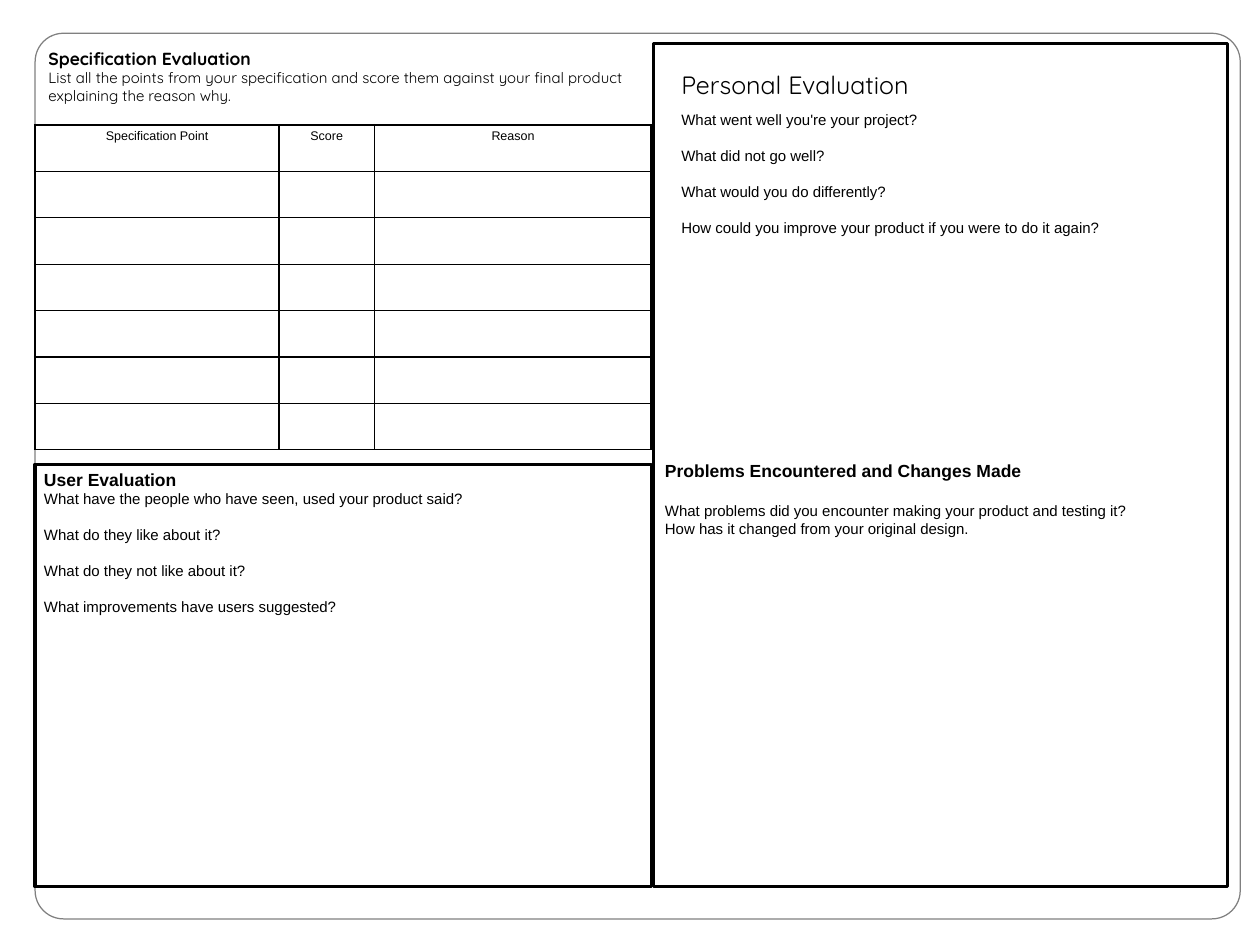
import dataclasses

import pptx
import pptx.dml.color
import pptx.enum.shapes
import pptx.enum.text
import pptx.oxml
import pptx.oxml.ns
import pptx.util

Inches = pptx.util.Inches
Pt = pptx.util.Pt
Kind = pptx.enum.shapes.MSO_SHAPE
Align = pptx.enum.text.PP_ALIGN

BLACK = pptx.dml.color.RGBColor(0x00, 0x00, 0x00)
GREY = pptx.dml.color.RGBColor(0x80, 0x80, 0x80)
LINE = 14.4  # height of one 12 pt line, used as the gap between questions
THIN, THICK = 1, 2.25


@dataclasses.dataclass
class Box:
    left: float
    top: float
    width: float
    height: float


@dataclasses.dataclass
class Frame:
    box: Box
    weight: float
    color: pptx.dml.color.RGBColor = BLACK
    kind: Kind = Kind.RECTANGLE


@dataclasses.dataclass
class Para:
    text: str
    size: float = 12
    bold: bool = False
    gap: float = 0
    font: str = "Arial"


@dataclasses.dataclass
class Note:
    box: Box
    paras: list[Para]


FRAMES = [
    Frame(Box(0.39, 0.37, 13.39, 9.84), 1, GREY, Kind.ROUNDED_RECTANGLE),
    Frame(Box(0.39, 5.16, 6.85, 4.69), 3),
    Frame(Box(7.26, 0.48, 6.38, 9.37), THICK),
]
TITLE = Note(Box(7.47, 0.72, 6.14, 0.44),
             [Para("Personal Evaluation", 20, font="Quicksand")])
BODY = Note(Box(7.47, 1.18, 6.14, 1.51), [
    Para("What went well you're your project?"),
    Para("What did not go well?", gap=LINE),
    Para("What would you do differently?", gap=LINE),
    Para("How could you improve your product if you were to do it again?",
         gap=LINE),
])
NOTES = [
    Note(Box(0.44, 0.48, 6.93, 0.74), [
        Para("Specification Evaluation", 14, True, font="Quicksand"),
        Para("List all the points from your specification and score them "
             "against your final product explaining the reason why.",
             font="Quicksand"),
    ]),
    Note(Box(0.39, 5.16, 5.51, 1.75), [
        Para("User Evaluation", 14, True),
        Para("What have the people who have seen, used your product said?"),
        Para("What do they like about it?", gap=LINE),
        Para("What do they not like about it?", gap=LINE),
        Para("What improvements have users suggested?", gap=LINE),
    ]),
    Note(Box(7.29, 5.06, 6.14, 0.98), [
        Para("Problems Encountered and Changes Made", 14, True),
        Para("What problems did you encounter making your product and "
             "testing it?", gap=16.8),
        Para("How has it changed from your original design."),
    ]),
]
GRID = Box(0.39, 1.39, 6.85, 3.61)
COLS = {"Specification Point": 2.71, "Score": 1.06, "Reason": 3.08}
ROWS = 7


def place(shape, box: Box) -> None:
    shape.left, shape.top = Inches(box.left), Inches(box.top)
    shape.width, shape.height = Inches(box.width), Inches(box.height)


def write(par, item: Para, align=Align.LEFT) -> None:
    par.alignment = align
    par.space_before = Pt(item.gap)
    run = par.add_run()
    run.text = item.text
    run.font.name = item.font
    run.font.size = Pt(item.size)
    run.font.bold = item.bold
    run.font.color.rgb = BLACK


def fill_note(shape, note: Note) -> None:
    place(shape, note.box)
    frame = shape.text_frame
    frame.word_wrap = True
    frame.auto_size = pptx.enum.text.MSO_AUTO_SIZE.NONE
    frame.vertical_anchor = pptx.enum.text.MSO_ANCHOR.TOP
    for i, item in enumerate(note.paras):
        par = frame.add_paragraph() if i else frame.paragraphs[0]
        write(par, item)


def clear_bullets(shape) -> None:
    for par in shape.text_frame.paragraphs:
        props = par._p.get_or_add_pPr()
        props.set("marL", "0")
        props.set("indent", "0")
        props.append(pptx.oxml.parse_xml(
            f"<a:buNone {pptx.oxml.ns.nsdecls('a')}/>"))


def draw_frame(slide, item: Frame) -> None:
    shape = slide.shapes.add_shape(item.kind, 0, 0, 0, 0)
    place(shape, item.box)
    if item.kind == Kind.ROUNDED_RECTANGLE:
        shape.adjustments[0] = 0.032
    shape.shadow.inherit = False
    shape.fill.background()
    shape.line.color.rgb = item.color
    shape.line.width = Pt(item.weight)


def set_edges(cell, edges: dict[str, float]) -> None:
    """Put border lines, in schema order, ahead of the cell's fill."""
    props = cell._tc.get_or_add_tcPr()
    for i, (side, weight) in enumerate(edges.items()):
        props.insert(i, pptx.oxml.parse_xml(
            f"<a:ln{side} {pptx.oxml.ns.nsdecls('a')} w='{Pt(weight)}'>"
            f"<a:solidFill><a:srgbClr val='{BLACK}'/></a:solidFill>"
            f"</a:ln{side}>"))


def draw_grid(slide) -> None:
    shape = slide.shapes.add_table(
        ROWS, len(COLS), Inches(GRID.left), Inches(GRID.top),
        Inches(GRID.width), Inches(GRID.height))
    table = shape.table
    table.first_row = table.horz_banding = False
    for row in table.rows:
        row.height = Inches(GRID.height / ROWS)
    last = len(COLS) - 1
    for c, (head, width) in enumerate(COLS.items()):
        table.columns[c].width = Inches(width)
        write(table.cell(0, c).text_frame.paragraphs[0],
              Para(head, 10, gap=2), Align.CENTER)
        for r in range(ROWS):
            cell = table.cell(r, c)
            cell.fill.background()
            set_edges(cell, {
                "L": THICK if c == 0 else THIN,
                "R": THICK if c == last else THIN,
                "T": THICK if r == 0 else THIN,
                "B": THIN,
            })


def main() -> None:
    deck = pptx.Presentation()
    deck.slide_width, deck.slide_height = Inches(14), Inches(10.5)
    slide = deck.slides.add_slide(deck.slide_layouts[1])
    fill_note(slide.shapes.title, TITLE)
    body = slide.placeholders[1]
    fill_note(body, BODY)
    clear_bullets(body)
    for item in FRAMES:
        draw_frame(slide, item)
    draw_grid(slide)
    for note in NOTES:
        fill_note(slide.shapes.add_textbox(0, 0, 0, 0), note)
    deck.save("out.pptx")


if __name__ == "__main__":
    main()
